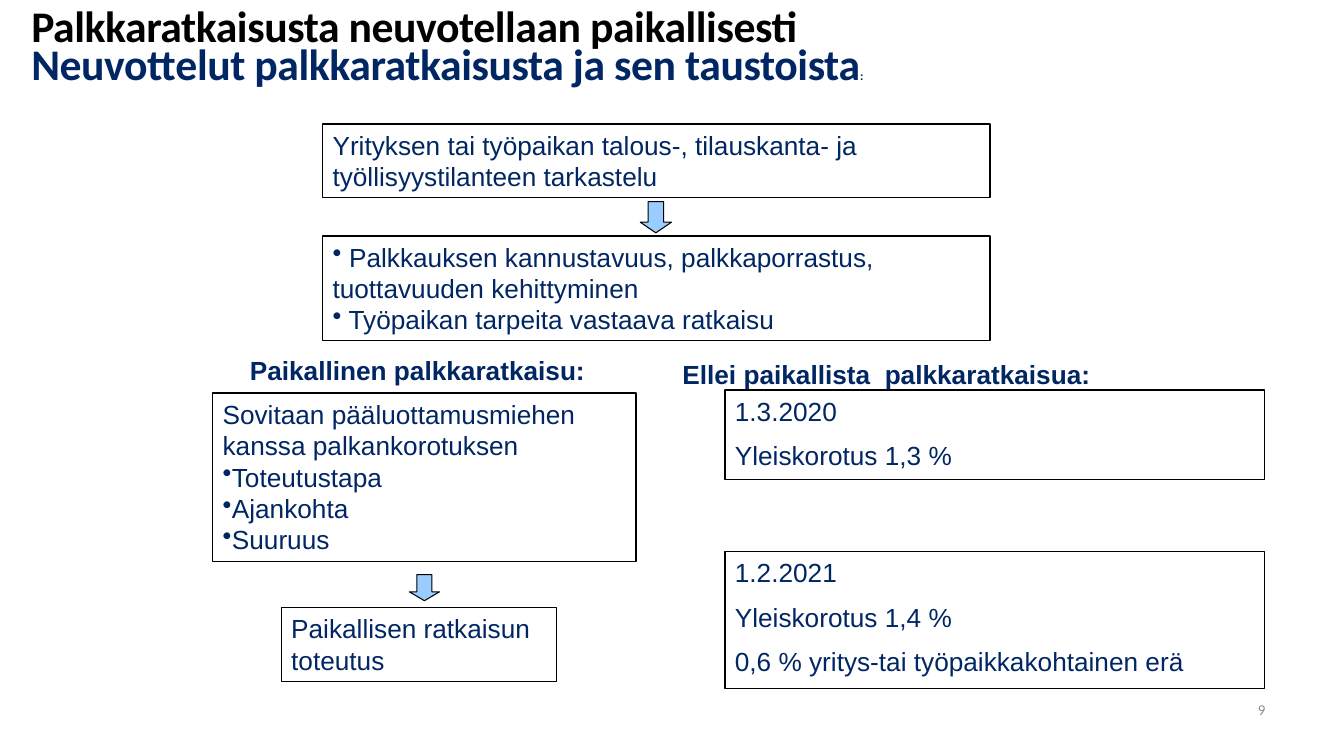
from dataclasses import dataclass

from lxml import etree
from pptx import Presentation
from pptx.dml.color import RGBColor
from pptx.enum.shapes import MSO_SHAPE
from pptx.enum.text import MSO_ANCHOR, MSO_AUTO_SIZE, PP_ALIGN
from pptx.oxml.ns import qn
from pptx.slide import Slide
from pptx.text.text import TextFrame
from pptx.util import Emu, Pt

RECTANGLE = MSO_SHAPE.RECTANGLE
DOWN_ARROW = MSO_SHAPE.DOWN_ARROW
TOP, MIDDLE = MSO_ANCHOR.TOP, MSO_ANCHOR.MIDDLE
LEFT, RIGHT = PP_ALIGN.LEFT, PP_ALIGN.RIGHT
FIXED_SIZE = MSO_AUTO_SIZE.NONE
EMU_PER_PX = 9144
TITLE_ONLY = 5


@dataclass(frozen=True)
class Theme:
    navy: RGBColor = RGBColor(0x00, 0x26, 0x64)
    black: RGBColor = RGBColor(0x00, 0x00, 0x00)
    sky: RGBColor = RGBColor(0x99, 0xCC, 0xFF)
    grey: RGBColor = RGBColor(0x8C, 0x8C, 0x8C)
    body_font: str = "Arial"
    title_font: str = "Calibri"
    body_size: float = 18.7
    title_size: float = 31.2
    colon_size: float = 8.7
    number_size: float = 10.7
    title_leading: float = 27
    paragraph_gap: float = 9.35
    box_line: float = 1
    arrow_line: float = 0.75


THEME = Theme()


@dataclass(frozen=True)
class Area:
    left: int
    top: int
    width: int
    height: int

    def emu(self) -> tuple[Emu, ...]:
        return tuple(px(n) for n in (self.left, self.top, self.width, self.height))


@dataclass(frozen=True)
class Style:
    size: float = THEME.body_size
    color: RGBColor = THEME.navy
    font: str = THEME.body_font
    bold: bool = False
    tracking: int = 0


@dataclass(frozen=True)
class Line:
    text: str
    bullet: bool = False


@dataclass(frozen=True)
class Step:
    area: Area
    lines: tuple[Line, ...]


@dataclass(frozen=True)
class Label:
    area: Area
    text: str
    style: Style
    align: PP_ALIGN = LEFT
    anchor: MSO_ANCHOR = TOP


HEADING = Style(bold=True)
PAGE_NUMBER = Style(THEME.number_size, THEME.grey, THEME.title_font)

TITLE_AREA = Area(19, 8, 1200, 89)
TITLE_LINES = (
    (("Palkkaratkaisusta neuvotellaan paikallisesti", THEME.title_size, THEME.black),),
    (
        ("Neuvottelut palkkaratkaisusta ja sen taustoista", THEME.title_size, THEME.navy),
        (":", THEME.colon_size, THEME.navy),
    ),
)

STEPS = (
    Step(Area(320, 123, 662, 73), (
        Line("Yrityksen tai työpaikan talous-, tilauskanta- ja työllisyystilanteen tarkastelu"),
    )),
    Step(Area(320, 234, 662, 104), (
        Line(" Palkkauksen kannustavuus, palkkaporrastus, tuottavuuden kehittyminen", True),
        Line(" Työpaikan tarpeita vastaava ratkaisu", True),
    )),
    Step(Area(211, 390, 420, 167), (
        Line("Sovitaan pääluottamusmiehen kanssa palkankorotuksen"),
        Line("Toteutustapa", True),
        Line("Ajankohta", True),
        Line("Suuruus", True),
    )),
    Step(Area(279, 603, 273, 73), (Line("Paikallisen ratkaisun toteutus"),)),
    Step(Area(719, 387, 535, 89), (Line("1.3.2020"), Line("Yleiskorotus 1,3 %"))),
    Step(Area(719, 547, 535, 136), (
        Line("1.2.2021"),
        Line("Yleiskorotus 1,4 %"),
        Line("0,6 % yritys-tai työpaikkakohtainen erä"),
    )),
)

ARROWS = (Area(635, 200, 31, 31), Area(406, 570, 30, 26))

LABELS = (
    Label(Area(238, 347, 365, 42), "Paikallinen palkkaratkaisu:", HEADING),
    Label(Area(667, 351, 452, 42), "Ellei paikallista  palkkaratkaisua:", HEADING),
    Label(Area(1192, 690, 73, 27), "9", PAGE_NUMBER, RIGHT, MIDDLE),
)


def px(count: int) -> Emu:
    return Emu(count * EMU_PER_PX)


def add_run(paragraph, text: str, style: Style) -> None:
    run = paragraph.add_run()
    run.text = text
    run.font.size = Pt(style.size)
    run.font.name = style.font
    run.font.bold = style.bold
    run.font.color.rgb = style.color
    if style.tracking:
        run.font._element.set("spc", str(style.tracking))


def paragraph_at(frame: TextFrame, index: int):
    return frame.add_paragraph() if index else frame.paragraphs[0]


def prepare(frame: TextFrame, anchor: MSO_ANCHOR) -> None:
    frame.word_wrap = True
    frame.auto_size = FIXED_SIZE
    frame.vertical_anchor = anchor


def add_title(slide: Slide) -> None:
    title = slide.shapes.title
    title.left, title.top, title.width, title.height = TITLE_AREA.emu()
    frame = title.text_frame
    prepare(frame, TOP)
    for index, runs in enumerate(TITLE_LINES):
        paragraph = paragraph_at(frame, index)
        paragraph.alignment = LEFT
        paragraph.line_spacing = Pt(THEME.title_leading)
        properties = paragraph._p.get_or_add_pPr()
        properties.set("marL", str(px(2)))
        properties.set("indent", "0")
        for text, size, color in runs:
            add_run(paragraph, text, Style(size, color, THEME.title_font, True, -30))


def add_step(slide: Slide, step: Step) -> None:
    box = slide.shapes.add_shape(RECTANGLE, *step.area.emu())
    box.shadow.inherit = False
    box.fill.background()
    box.line.color.rgb = THEME.black
    box.line.width = Pt(THEME.box_line)
    prepare(box.text_frame, TOP)
    for index, line in enumerate(step.lines):
        paragraph = paragraph_at(box.text_frame, index)
        paragraph.alignment = LEFT
        if line.bullet:
            properties = paragraph._p.get_or_add_pPr()
            etree.SubElement(properties, qn("a:buChar")).set("char", "•")
        elif index:
            paragraph.space_before = Pt(THEME.paragraph_gap)
        add_run(paragraph, line.text, Style())


def add_arrow(slide: Slide, area: Area) -> None:
    arrow = slide.shapes.add_shape(DOWN_ARROW, *area.emu())
    arrow.shadow.inherit = False
    arrow.adjustments[0] = 0.5
    arrow.adjustments[1] = 0.34
    arrow.fill.solid()
    arrow.fill.fore_color.rgb = THEME.sky
    arrow.line.color.rgb = THEME.black
    arrow.line.width = Pt(THEME.arrow_line)


def add_label(slide: Slide, label: Label) -> None:
    frame = slide.shapes.add_textbox(*label.area.emu()).text_frame
    prepare(frame, label.anchor)
    frame.paragraphs[0].alignment = label.align
    add_run(frame.paragraphs[0], label.text, label.style)


def main() -> None:
    deck = Presentation()
    deck.slide_width, deck.slide_height = px(1333), px(750)
    slide = deck.slides.add_slide(deck.slide_layouts[TITLE_ONLY])
    add_title(slide)
    for step in STEPS:
        add_step(slide, step)
    for area in ARROWS:
        add_arrow(slide, area)
    for label in LABELS:
        add_label(slide, label)
    deck.save("out.pptx")


if __name__ == "__main__":
    main()
